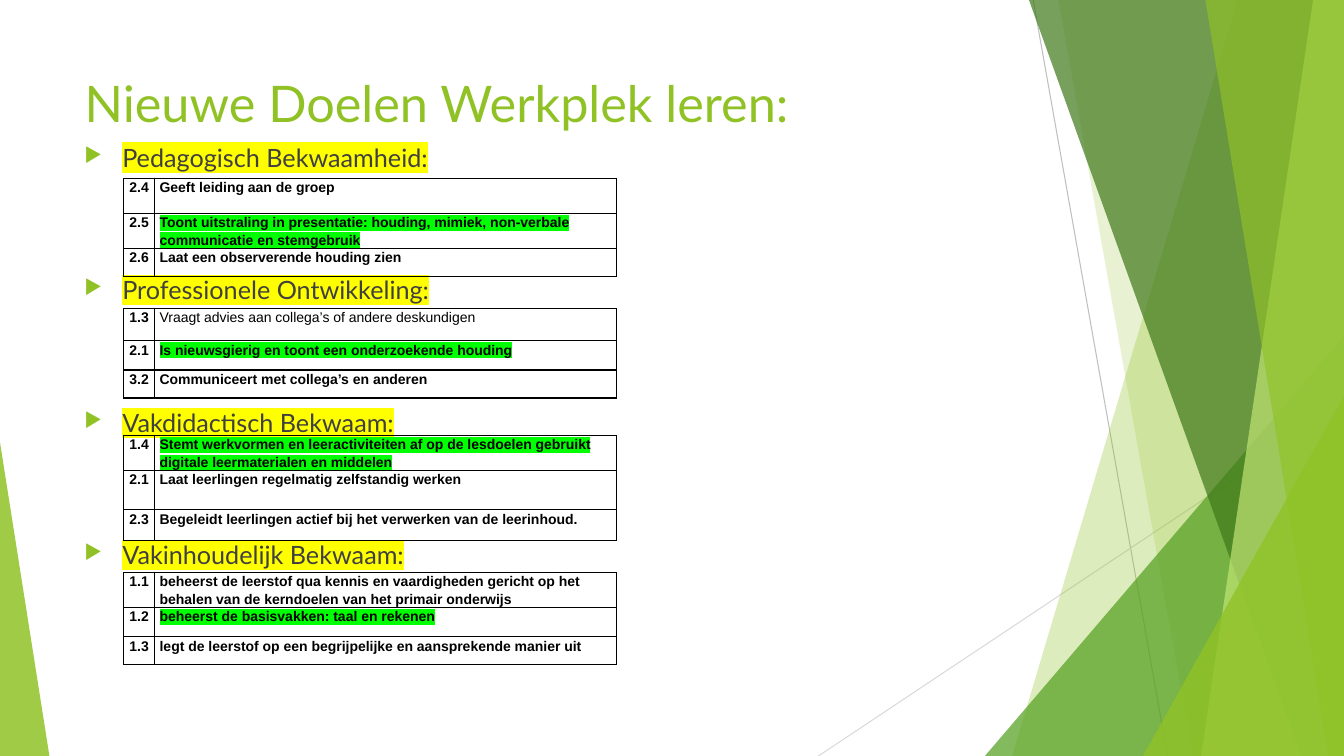
from dataclasses import dataclass

import pptx
import pptx.dml.color
import pptx.enum.shapes
import pptx.enum.text
import pptx.oxml
import pptx.oxml.ns
import pptx.util
from pptx.dml.color import RGBColor
from pptx.util import Pt

GREEN = RGBColor(0x90, 0xC2, 0x26)
MID_GREEN = RGBColor(0x54, 0xA0, 0x21)
DARK_GREEN = RGBColor(0x3F, 0x78, 0x19)
PALE_GREEN = RGBColor(0xC0, 0xE4, 0x74)
GREY = RGBColor(0xBF, 0xBF, 0xBF)
LIGHT_GREY = RGBColor(0xD9, 0xD9, 0xD9)
TEXT_GREY = RGBColor(0x40, 0x40, 0x40)
BLACK = RGBColor(0, 0, 0)
YELLOW = RGBColor(0xFF, 0xFF, 0)
LIME = RGBColor(0, 0xFF, 0)

WIDTH, HEIGHT = 960, 540
TEXT_LEFT, TEXT_WIDTH = 53.3, 676.8
TABLE_LEFT, COLUMN_WIDTHS = 88.4, (22, 330)
HEADING_GAP = 73.1


@dataclass(frozen=True)
class Line:
    start: tuple[float, float]
    end: tuple[float, float]
    color: RGBColor


@dataclass(frozen=True)
class Facet:
    """Band from the top edge to the bottom edge, flush with the right edge."""
    top_left: float
    bottom_left: float
    color: RGBColor
    opacity: int


@dataclass(frozen=True)
class Triangle:
    left: float
    top: float
    width: float
    apex: float
    color: RGBColor
    opacity: int


@dataclass(frozen=True)
class Goal:
    number: str
    text: str
    height: float
    highlighted: bool = False
    bold: bool = True


@dataclass(frozen=True)
class Section:
    heading: str
    table_top: float
    goals: tuple[Goal, ...]


DECORATION = (
    Line((738, 0), (834, HEIGHT), GREY),
    Line((WIDTH, 290), (584.6, HEIGHT), LIGHT_GREY),
    Facet(884, 723, GREEN, 30),
    Facet(756, 852, GREEN, 20),
    Triangle(703.5, 240, 256.5, 1, MID_GREEN, 72),
    Facet(735, 929.5, DARK_GREEN, 70),
    Facet(938, 858, PALE_GREEN, 70),
    Facet(861, 949, GREEN, 65),
    Triangle(816.5, 283, 143.5, 1, GREEN, 80),
    Triangle(0, 316, 35.3, 0, GREEN, 85),
)

SECTIONS = (
    Section("Pedagogisch Bekwaamheid:", 127.3, (
        Goal("2.4", "Geeft leiding aan de groep", 25),
        Goal("2.5", "Toont uitstraling in presentatie: houding, mimiek, non-verbale "
             "communicatie en stemgebruik", 25, highlighted=True),
        Goal("2.6", "Laat een observerende houding zien", 20),
    )),
    Section("Professionele Ontwikkeling:", 220.3, (
        Goal("1.3", "Vraagt advies aan collega’s of andere deskundigen", 23, bold=False),
        Goal("2.1", "Is nieuwsgierig en toont een onderzoekende houding", 21, highlighted=True),
        Goal("3.2", "Communiceert met collega’s en anderen", 20),
    )),
    Section("Vakdidactisch Bekwaam:", 311, (
        Goal("1.4", "Stemt werkvormen en leeractiviteiten af op de lesdoelen gebruikt "
             "digitale leermaterialen en middelen", 25, highlighted=True),
        Goal("2.1", "Laat leerlingen regelmatig zelfstandig werken", 28),
        Goal("2.3", "Begeleidt leerlingen actief bij het verwerken van de leerinhoud.", 22),
    )),
    Section("Vakinhoudelijk Bekwaam:", 408.8, (
        Goal("1.1", "beheerst de leerstof qua kennis en vaardigheden gericht op het "
             "behalen van de kerndoelen van het primair onderwijs", 25),
        Goal("1.2", "beheerst de basisvakken: taal en rekenen", 21, highlighted=True),
        Goal("1.3", "legt de leerstof op een begrijpelijke en aansprekende manier uit", 20),
    )),
)


def element(xml: str):
    """Parse one DrawingML element, given without its namespace declaration."""
    tag, rest = xml[1:].split(" ", 1)
    return pptx.oxml.parse_xml(f"<{tag} {pptx.oxml.ns.nsdecls('a')} {rest}")


def fill_shape(shape, color: RGBColor, opacity: int) -> None:
    shape.shadow.inherit = False
    shape.line.fill.background()
    shape.fill.solid()
    shape.fill.fore_color.rgb = color
    color_element = shape._element.spPr.find(".//" + pptx.oxml.ns.qn("a:srgbClr"))
    color_element.append(element(f'<a:alpha val="{opacity * 1000}"/>'))


def draw_line(slide, line: Line) -> None:
    connector = slide.shapes.add_connector(
        pptx.enum.shapes.MSO_CONNECTOR.STRAIGHT, *map(Pt, line.start + line.end))
    connector.line.color.rgb = line.color
    connector.line.width = Pt(0.75)
    connector._element.spPr.append(element("<a:effectLst />"))


def draw_facet(slide, facet: Facet) -> None:
    builder = slide.shapes.build_freeform(Pt(facet.top_left), 0)
    corners = ((WIDTH, 0), (WIDTH, HEIGHT), (facet.bottom_left, HEIGHT))
    builder.add_line_segments([(Pt(x), Pt(y)) for x, y in corners])
    fill_shape(builder.convert_to_shape(), facet.color, facet.opacity)


def draw_triangle(slide, triangle: Triangle) -> None:
    shape = slide.shapes.add_shape(
        pptx.enum.shapes.MSO_SHAPE.ISOSCELES_TRIANGLE, Pt(triangle.left), Pt(triangle.top),
        Pt(triangle.width), Pt(HEIGHT - triangle.top))
    shape.adjustments[0] = triangle.apex
    fill_shape(shape, triangle.color, triangle.opacity)


def add_run(paragraph, text: str, font: str, size: float, color: RGBColor,
            bold: bool = False, highlight: RGBColor | None = None) -> None:
    run = paragraph.add_run()
    run.text = text
    run.font.name = font
    run.font.size = Pt(size)
    run.font.bold = bold
    run.font.color.rgb = color
    if highlight is not None:
        fill = run._r.rPr.find(pptx.oxml.ns.qn("a:solidFill"))
        fill.addnext(element(f'<a:highlight ><a:srgbClr val="{highlight}"/></a:highlight>'))


def write_title(slide) -> None:
    title = slide.shapes.title
    title.left, title.top = Pt(TEXT_LEFT), Pt(48.2)
    title.width, title.height = Pt(TEXT_WIDTH), Pt(103.7)
    title.text_frame.vertical_anchor = pptx.enum.text.MSO_ANCHOR.TOP
    paragraph = title.text_frame.paragraphs[0]
    paragraph.alignment = pptx.enum.text.PP_ALIGN.LEFT
    add_run(paragraph, "Nieuwe Doelen Werkplek leren:", "Lato", 36, GREEN)


def write_headings(slide) -> None:
    box = slide.shapes.add_textbox(Pt(TEXT_LEFT), Pt(98), Pt(TEXT_WIDTH), Pt(442))
    frame = box.text_frame
    frame.word_wrap = True
    for index, section in enumerate(SECTIONS):
        paragraph = frame.add_paragraph() if index else frame.paragraphs[0]
        properties = paragraph._p.get_or_add_pPr()
        properties.set("marL", str(Pt(27)))
        properties.set("indent", str(-Pt(27)))
        properties.append(element(f'<a:buClr ><a:srgbClr val="{GREEN}"/></a:buClr>'))
        properties.append(element('<a:buSzPct val="80000"/>'))
        properties.append(element('<a:buChar char="▶"/>'))
        if index:
            paragraph.space_before = Pt(HEADING_GAP)
        add_run(paragraph, section.heading, "Lato", 18, TEXT_GREY, highlight=YELLOW)


def format_cell(cell) -> None:
    cell.margin_left = cell.margin_right = Pt(3.6)
    cell.margin_top = cell.margin_bottom = 0
    properties = cell._tc.get_or_add_tcPr()
    for side in "LRTB":
        properties.append(element(
            f'<a:ln{side} w="{Pt(1)}"><a:solidFill><a:srgbClr val="{BLACK}"/>'
            f"</a:solidFill></a:ln{side}>"))
    cell.fill.background()
    cell.text_frame.paragraphs[0].line_spacing = Pt(12.5)


def draw_goals(slide, section: Section) -> None:
    table = slide.shapes.add_table(
        len(section.goals), 2, Pt(TABLE_LEFT), Pt(section.table_top), Pt(sum(COLUMN_WIDTHS)),
        Pt(sum(goal.height for goal in section.goals))).table
    table.first_row = table.horz_banding = False
    for column, width in zip(table.columns, COLUMN_WIDTHS):
        column.width = Pt(width)
    for row, goal in zip(table.rows, section.goals):
        row.height = Pt(goal.height)
        for cell in row.cells:
            format_cell(cell)
        number, text = (cell.text_frame.paragraphs[0] for cell in row.cells)
        number.alignment = pptx.enum.text.PP_ALIGN.CENTER
        add_run(number, goal.number, "Arial", 10, BLACK, bold=True)
        add_run(text, goal.text, "Arial", 10, BLACK, goal.bold,
                LIME if goal.highlighted else None)


def main() -> None:
    presentation = pptx.Presentation()
    presentation.slide_width, presentation.slide_height = Pt(WIDTH), Pt(HEIGHT)
    slide = presentation.slides.add_slide(presentation.slide_layouts[5])
    draw = {Line: draw_line, Facet: draw_facet, Triangle: draw_triangle}
    for item in DECORATION:
        draw[type(item)](slide, item)
    write_title(slide)
    write_headings(slide)
    for section in SECTIONS:
        draw_goals(slide, section)
    presentation.save("out.pptx")


if __name__ == "__main__":
    main()
